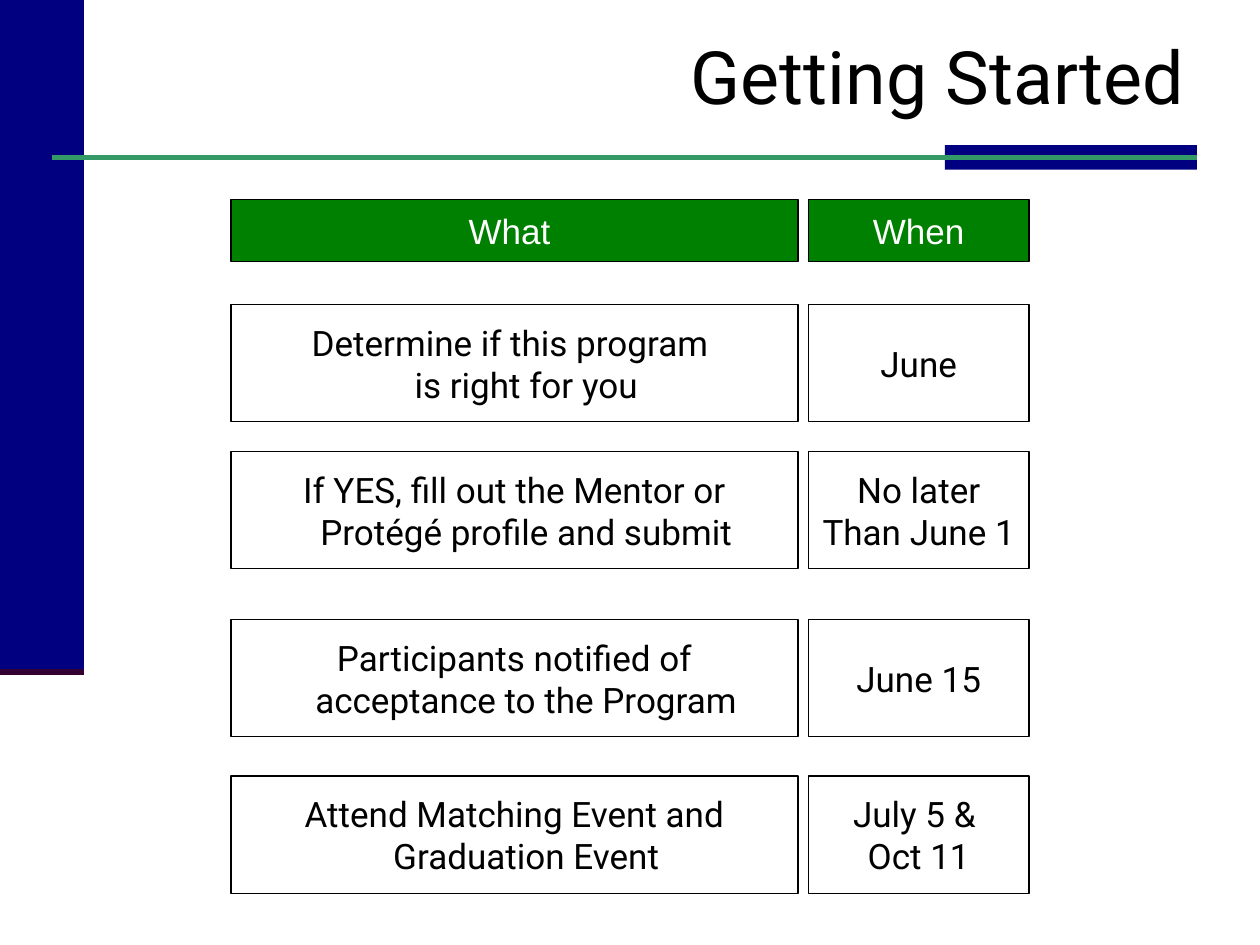
from pptx import Presentation
from pptx.dml.color import RGBColor
from pptx.enum.shapes import MSO_CONNECTOR, MSO_SHAPE
from pptx.enum.text import MSO_ANCHOR, MSO_AUTO_SIZE, PP_ALIGN
from pptx.oxml.ns import qn
from pptx.util import Pt
from lxml.etree import SubElement


def add_box(left, top, width, height, fill=None, line=None):
    sp = s.shapes.add_shape(MSO_SHAPE.RECTANGLE, Pt(left), Pt(top), Pt(width), Pt(height))
    sp.shadow.inherit = False
    if fill:
        sp.fill.solid()
        sp.fill.fore_color.rgb = RGBColor.from_string(fill)
    else:
        sp.fill.background()
    if line:
        sp.line.color.rgb = RGBColor.from_string(line)
        sp.line.width = Pt(0.75)
    else:
        sp.line.fill.background()
    return sp


def set_text(sp, text, size=20, font="Roboto", color="000000",
             align=PP_ALIGN.CENTER, hanging=0, spacing=None):
    """Fill a shape: \\n starts a paragraph, \\v breaks a line."""
    tf = sp.text_frame
    tf.word_wrap = True
    tf.auto_size = MSO_AUTO_SIZE.NONE
    tf.vertical_anchor = MSO_ANCHOR.MIDDLE
    tf.text = text
    for p in tf.paragraphs:
        p.alignment = align
        if spacing:
            p.line_spacing = spacing
        if hanging:
            pPr = p._p.get_or_add_pPr()
            pPr.set("marL", str(Pt(hanging)))
            pPr.set("indent", str(-Pt(hanging)))
        for r in p.runs:
            r.font.size = Pt(size)
            r.font.name = font
            r.font.color.rgb = RGBColor.from_string(color)


prs = Presentation()
prs.slide_width, prs.slide_height = Pt(720), Pt(540)
s = prs.slides.add_slide(prs.slide_layouts[5])

# Side band, accent bar and rules
add_box(0, 0, 48, 384, fill="000080")
add_box(540, 83, 144, 14, fill="000080")
for x1, x2, y, color, width in [(30, 684, 90, "339966", 3), (0, 48, 384, "330033", 3.5)]:
    rule = s.shapes.add_connector(MSO_CONNECTOR.STRAIGHT, Pt(x1), Pt(y), Pt(x2), Pt(y))
    rule.line.color.rgb = RGBColor.from_string(color)
    rule.line.width = Pt(width)
    SubElement(rule._element.spPr, qn("a:effectLst"))

title = s.shapes.title
title.left, title.top, title.width, title.height = Pt(72), Pt(17.5), Pt(612), Pt(62)
set_text(title, "Getting Started", size=42, align=PP_ALIGN.RIGHT, spacing=0.75)

# Schedule: top, height, what, when
rows = [
    (114, 35.5, "What ", "When"),
    (174, 67, "Determine if this program \vis right for you", "June"),
    (258, 67, "If YES, fill out the Mentor or Protégé profile and submit",
     "No later Than June 1 "),
    (354, 67, "Participants notified of acceptance to the Program", "June 15"),
    (443.5, 67, "Attend Matching Event and Graduation Event", "July 5 & \nOct 11"),
]
for i, (top, height, what, when) in enumerate(rows):
    header = i == 0
    style = {"font": "Arial", "color": "FFFFFF"} if header else {}
    for left, width, text, hanging in [(132, 324, what, 13.5), (462, 126, when, 0)]:
        sp = add_box(left, top, width, height, fill="008000" if header else None, line="000000")
        set_text(sp, text, hanging=hanging, **style)

prs.save("out.pptx")
